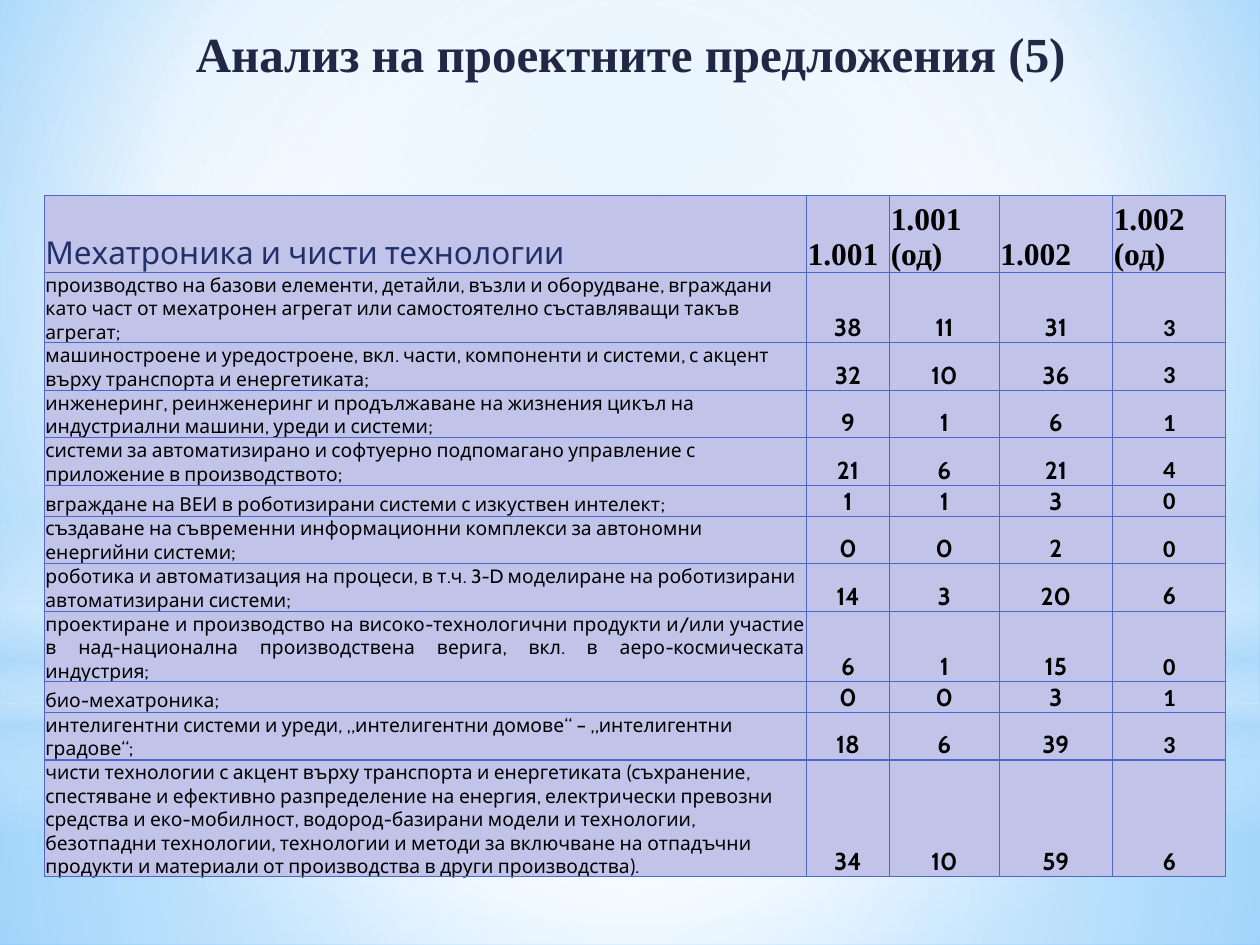
from lxml import etree
from pptx import Presentation
from pptx.dml.color import RGBColor
from pptx.enum.shapes import MSO_SHAPE
from pptx.enum.text import MSO_ANCHOR, PP_ALIGN
from pptx.oxml.ns import nsdecls, qn
from pptx.util import Inches, Pt

LEFT, CENTER, JUSTIFY = PP_ALIGN.LEFT, PP_ALIGN.CENTER, PP_ALIGN.JUSTIFY
BOTTOM, MIDDLE = MSO_ANCHOR.BOTTOM, MSO_ANCHOR.MIDDLE
RECTANGLE, OVAL = MSO_SHAPE.RECTANGLE, MSO_SHAPE.OVAL

# Content
TITLE = "Анализ на проектните предложения (5)"
HEADER = ["Мехатроника и чисти технологии", "1.001", "1.001 (од)", "1.002", "1.002 (од)"]
# Topic, its number of text lines, alignment, counts
TOPICS = [
    ("производство на базови елементи, детайли, възли и оборудване, вграждани като част "
     "от мехатронен агрегат или самостоятелно съставляващи такъв агрегат;",
     3, LEFT, (38, 11, 31, 3)),
    ("машиностроене и уредостроене, вкл. части, компоненти и системи, с акцент върху "
     "транспорта и енергетиката;", 2, LEFT, (32, 10, 36, 3)),
    ("инженеринг, реинженеринг и продължаване на жизнения цикъл на индустриални машини, "
     "уреди и системи;", 2, LEFT, (9, 1, 6, 1)),
    ("системи за автоматизирано и софтуерно подпомагано управление с приложение в "
     "производството;", 2, LEFT, (21, 6, 21, 4)),
    ("вграждане на ВЕИ в роботизирани системи с изкуствен интелект;",
     1, LEFT, (1, 1, 3, 0)),
    ("създаване на съвременни информационни комплекси за автономни енергийни системи;",
     2, LEFT, (0, 0, 2, 0)),
    ("роботика и автоматизация на процеси, в т.ч. 3-D моделиране на роботизирани "
     "автоматизирани системи;", 2, LEFT, (14, 3, 20, 6)),
    ("проектиране и производство на високо-технологични продукти и/или участие в "
     "над-национална производствена верига, вкл. в аеро-космическата индустрия;",
     3, JUSTIFY, (6, 1, 15, 0)),
    ("био-мехатроника;", 1, JUSTIFY, (0, 0, 3, 1)),
    ("интелигентни системи и уреди, „интелигентни домове“ – „интелигентни градове“;",
     2, LEFT, (18, 6, 39, 3)),
    ("чисти технологии с акцент върху транспорта и енергетиката (съхранение, спестяване и "
     "ефективно разпределение на енергия, електрически превозни средства и еко-мобилност, "
     "водород-базирани модели и технологии, безотпадни технологии, технологии и методи за "
     "включване на отпадъчни продукти и материали от производства в други производства).",
     5, LEFT, (34, 10, 59, 6)),
]

# Text styles: font, size, colour, bold
THEME = {
    "title": ("Times New Roman", 28, "212745", True),
    "heading": ("Cabin", 18, "21306A", False),
    "column": ("Times New Roman", 18, "000000", True),
    "topic": ("Cabin", 11, "000000", False),
    "count": ("Cabin", 14, "000000", True),
    "last count": ("Calibri", 14, "000000", True),
    "cell": "C1C3E8",
    "border": "4E67C8",
    "white": "FFFFFF",
    "haze": "B4DCFA",
    "sky": "9ED5FF",
    "deep sky": "5BB9FF",
}

# Geometry
WIDTH, HEIGHT = 10, 7.5
HORIZON = 5.58
TABLE_LEFT, TABLE_TOP, TABLE_HEIGHT = 0.35, 1.55, 5.16
COLUMNS = [6.05, 0.66, 0.87, 0.9, 0.9]
LINE_HEIGHT = 0.18
BORDER_WIDTH = 0.75

# Gradients: stops are position, colour, opacity; a centre makes them circular
CENTRE = (50, 50, 50, 50)
BACKGROUND = ([(0, "sky", 100), (60, "white", 100), (100, "deep sky", 100)], (20, 10, 20, 60))
LAYERS = [
    (RECTANGLE, HORIZON, HEIGHT - HORIZON,
     [(0, "white", 91), (37, "white", 76), (100, "haze", 79)], CENTRE),
    (RECTANGLE, 0, HORIZON,
     [(0, "white", 89), (48, "white", 62), (100, "haze", 79)], CENTRE),
    (RECTANGLE, 4.12, 2.5,
     [(0, "white", 0), (29, "white", 30), (45, "haze", 40), (55, "white", 26),
      (65, "haze", 60), (100, "white", 0)], None),
    (OVAL, 1.75, HORIZON, [(0, "white", 100), (56, "white", 0)], CENTRE),
]


def set_gradient(properties, stops, centre):
    """Swap the solid fill of a properties element for a gradient."""
    stop_xml = "".join(
        f'<a:gs pos="{position * 1000}"><a:srgbClr val="{THEME[colour]}">'
        f'<a:alpha val="{opacity * 1000}"/></a:srgbClr></a:gs>'
        for position, colour, opacity in stops)
    if centre:
        sides = " ".join(f'{side}="{share * 1000}"' for side, share in zip("ltrb", centre))
        shade = f'<a:path path="circle"><a:fillToRect {sides}/></a:path>'
    else:
        shade = '<a:lin ang="5400000" scaled="0"/>'
    gradient = etree.fromstring(
        f'<a:gradFill {nsdecls("a")} rotWithShape="1"><a:gsLst>{stop_xml}</a:gsLst>{shade}</a:gradFill>')
    properties.replace(properties.find(qn("a:solidFill")), gradient)


def write(frame, text, style, alignment):
    paragraph = frame.paragraphs[0]
    paragraph.alignment = alignment
    run = paragraph.add_run()
    run.text = text
    name, size, colour, bold = THEME[style]
    run.font.name, run.font.size, run.font.bold = name, Pt(size), bold
    run.font.color.rgb = RGBColor.from_string(colour)


def fill_cell(cell, text, style, alignment):
    cell.margin_left = cell.margin_top = cell.margin_right = Inches(0.01)
    cell.margin_bottom = 0
    cell.vertical_anchor = BOTTOM
    properties = cell._tc.get_or_add_tcPr()
    for side in "LRTB":
        properties.append(etree.fromstring(
            f'<a:ln{side} {nsdecls("a")} w="{Pt(BORDER_WIDTH)}"><a:solidFill>'
            f'<a:srgbClr val="{THEME["border"]}"/></a:solidFill></a:ln{side}>'))
    cell.fill.solid()
    cell.fill.fore_color.rgb = RGBColor.from_string(THEME["cell"])
    write(cell.text_frame, text, style, alignment)


def add_backdrop(slide):
    slide.background.fill.solid()
    set_gradient(slide.element.find(".//" + qn("p:bgPr")), *BACKGROUND)
    for kind, top, height, stops, centre in LAYERS:
        shape = slide.shapes.add_shape(kind, 0, Inches(top), Inches(WIDTH), Inches(height))
        shape.shadow.inherit = False
        shape.line.fill.background()
        shape.fill.solid()
        set_gradient(shape.element.spPr, stops, centre)


def add_title(slide):
    box = slide.shapes.add_textbox(Inches(0.2), 0, Inches(9.61), Inches(0.84))
    box.text_frame.word_wrap = True
    box.text_frame.vertical_anchor = MIDDLE
    write(box.text_frame, TITLE, "title", CENTER)


def add_topic_table(slide):
    frame = slide.shapes.add_table(
        len(TOPICS) + 1, len(COLUMNS), Inches(TABLE_LEFT), Inches(TABLE_TOP),
        Inches(sum(COLUMNS)), Inches(TABLE_HEIGHT))
    table = frame.table
    table.first_row = table.horz_banding = False
    for column, width in zip(table.columns, COLUMNS):
        column.width = Inches(width)

    # Each row is a list of text, style, alignment
    rows = [[(text, "column" if index else "heading", LEFT)
             for index, text in enumerate(HEADER)]]
    for topic, _, alignment, counts in TOPICS:
        styles = ["count"] * (len(counts) - 1) + ["last count"]
        rows.append([(topic, "topic", alignment)]
                    + [(str(count), style, CENTER) for count, style in zip(counts, styles)])
    line_counts = [1] + [topic[1] for topic in TOPICS]
    for row, contents, lines in zip(table.rows, rows, line_counts):
        row.height = Inches(LINE_HEIGHT * lines)
        for cell, content in zip(row.cells, contents):
            fill_cell(cell, *content)
    frame.height = Inches(TABLE_HEIGHT)


def main():
    presentation = Presentation()
    presentation.slide_width, presentation.slide_height = Inches(WIDTH), Inches(HEIGHT)
    slide = presentation.slides.add_slide(presentation.slide_layouts[6])
    add_backdrop(slide)
    add_title(slide)
    add_topic_table(slide)
    presentation.save("out.pptx")


if __name__ == "__main__":
    main()
